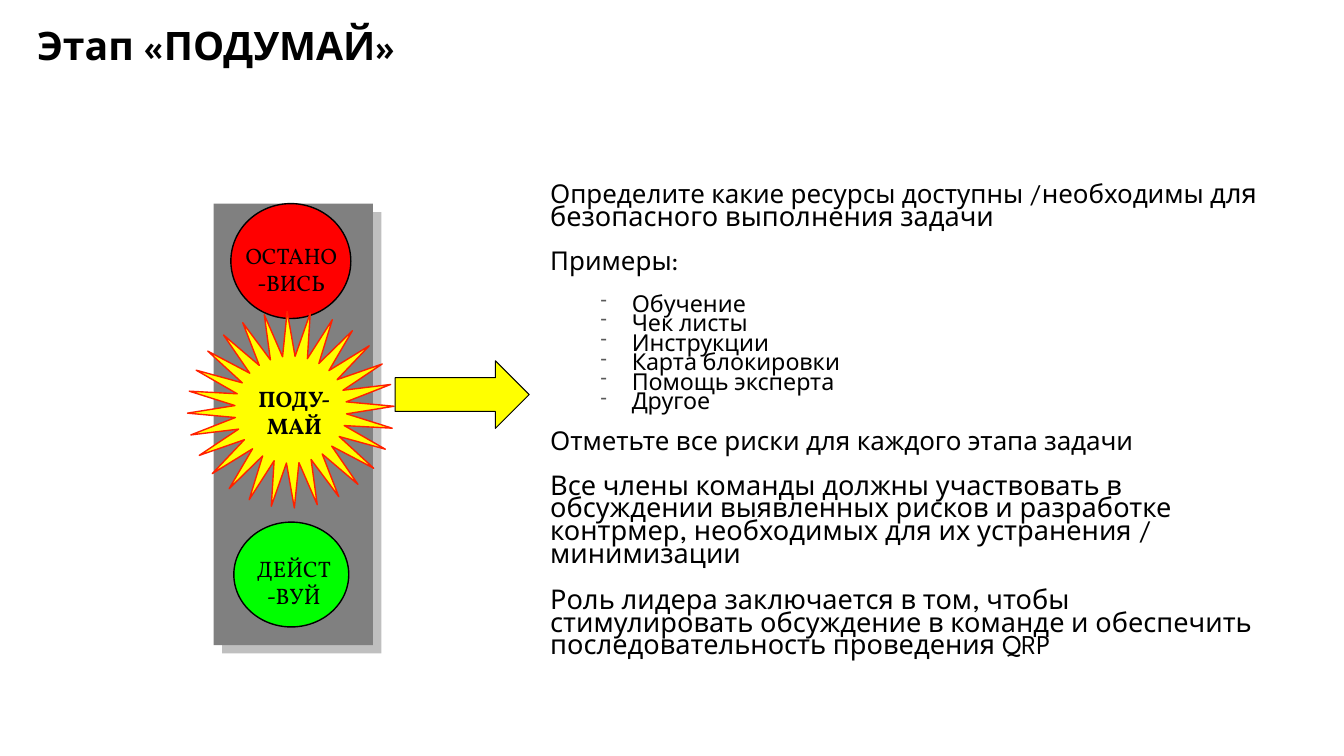
import math

import pptx
import pptx.dml.color
import pptx.enum.shapes
import pptx.enum.text
import pptx.oxml
import pptx.oxml.ns
import pptx.util

Pt = pptx.util.Pt
SHAPE = pptx.enum.shapes.MSO_SHAPE
ALIGN = pptx.enum.text.PP_ALIGN
ANCHOR = pptx.enum.text.MSO_ANCHOR

# Content
TITLE = "Этап «ПОДУМАЙ»"
# Each paragraph: space before, kind, [(text, size name)]
BODY = [
    (0, "plain", [("Определите какие ресурсы доступны /необходимы ", "body"),
                  ("для безопасного выполнения задачи", "large")]),
    (15.6, "plain", [("Примеры:", "body")]),
    (15.6, "item", [("Обучение", "item")]),
    (0, "item", [("Чек листы", "item")]),
    (0, "item", [("Инструкции", "item")]),
    (0, "item", [("Карта блокировки", "item")]),
    (0, "item", [("Помощь эксперта", "item")]),
    (0, "item", [("Другое", "item")]),
    (14, "plain", [("Отметьте все риски для каждого этапа задачи", "body")]),
    (15.6, "plain", [("Все члены команды должны участвовать в обсуждении "
                      "выявленных рисков и разработке контрмер, необходимых "
                      "для их устранения / минимизации", "large")]),
    (16.4, "plain", [("Роль лидера заключается в том, чтобы стимулировать "
                      "обсуждение в команде и обеспечить последовательность "
                      "проведения QRP", "large")]),
]
# Each label: box, lines, bold
LABELS = [
    ((128.16, 169.2, 159.84, 46.08), ["ОСТАНО", "-ВИСЬ"], False),
    ((172.08, 271.44, 76.32, 46.08), ["ПОДУ-МАЙ"], True),
    ((144.72, 393.12, 130.32, 46.08), ["ДЕЙСТ", "-ВУЙ"], False),
]

# Theme and layout
THEME = {
    "font": "League Spartan", "label font": "Vollkorn",
    "sizes": {"title": 28, "body": 18.5, "large": 19.4, "item": 16.6, "label": 16},
    "text": "000000", "bullet": "595959", "housing": "808080",
    "stop": "FF0000", "think": "FFFF00", "act": "00FF00", "burst edge": "FF2000",
}
TITLE_BOX = (19.44, 6.48, 864, 56.88)
BODY_BOX = (385.92, 128.88, 520.56, 362.16)
HOUSING = (152.64, 145.44, 113.76, 315.36)
ACT_LIGHT = (167.04, 372.96, 82.08, 74.88)
STOP_LIGHT = (164.88, 145.44, 85.68, 82.08)
ARROW = (282.24, 257.76, 95.76, 48.24)
BURST_CENTRE = (207.72, 292.68)
BURST_RADII = [(73.8, 70.2), (40, 38.2)]  # tips, notches
BURST_TIPS = 28
BURST_TURN = -2  # degrees


def colour(name):
    return pptx.dml.color.RGBColor.from_string(THEME[name])


def paint(shape, fill, line=None, width=1):
    shape.shadow.inherit = False
    shape.fill.solid()
    shape.fill.fore_color.rgb = colour(fill)
    if line:
        shape.line.color.rgb = colour(line)
        shape.line.width = Pt(width)
    else:
        shape.line.fill.background()


def add_painted(page, kind, box, *style):
    shape = page.shapes.add_shape(kind, *map(Pt, box))
    paint(shape, *style)
    return shape


def add_frame(page, box, anchor=ANCHOR.TOP):
    frame = page.shapes.add_textbox(*map(Pt, box)).text_frame
    frame.word_wrap = True
    frame.vertical_anchor = anchor
    return frame


def next_para(frame, index):
    return frame.add_paragraph() if index else frame.paragraphs[0]


def set_font(font, size, face="font", bold=False):
    font.name = THEME[face]
    font.size = Pt(THEME["sizes"][size])
    font.bold = bold
    font.color.rgb = colour("text")


def add_xml(parent, xml):
    namespace = pptx.oxml.ns.nsdecls("a")
    parent.append(pptx.oxml.parse_xml(xml.replace(" ", f" {namespace} ", 1)))


def add_bullet(para):
    props = para._p.get_or_add_pPr()
    props.set("marL", str(Pt(58.32)))
    props.set("indent", str(-Pt(22.32)))
    add_xml(props, f'<a:buClr ><a:srgbClr val="{THEME["bullet"]}"/></a:buClr>')
    add_xml(props, '<a:buSzPct val="80000"/>')
    add_xml(props, '<a:buChar char="-"/>')


def burst_points():
    for index in range(2 * BURST_TIPS):
        angle = math.radians(BURST_TURN) + index * math.pi / BURST_TIPS
        across, down = BURST_RADII[index % 2]
        yield (Pt(BURST_CENTRE[0] + across * math.cos(angle)),
               Pt(BURST_CENTRE[1] + down * math.sin(angle)))


def main():
    deck = pptx.Presentation()
    deck.slide_width, deck.slide_height = Pt(960), Pt(540)
    page = deck.slides.add_slide(deck.slide_layouts[6])

    # Title
    para = add_frame(page, TITLE_BOX, ANCHOR.MIDDLE).paragraphs[0]
    para.text = TITLE
    para.line_spacing = 0.8
    set_font(para.font, "title", bold=True)

    # Body text
    frame = add_frame(page, BODY_BOX)
    for index, (space, kind, spans) in enumerate(BODY):
        para = next_para(frame, index)
        if kind == "item":
            add_bullet(para)
        para.line_spacing = 0.7
        para.space_before = Pt(space)
        set_font(para.font, spans[0][1])
        for text, size in spans:
            span = para.add_run()
            span.text = text
            if size != spans[0][1]:
                span.font.size = Pt(THEME["sizes"][size])

    # Traffic light
    housing = add_painted(page, SHAPE.RECTANGLE, HOUSING, "housing")
    effects = housing._element.spPr.find(pptx.oxml.ns.qn("a:effectLst"))
    add_xml(effects, f'<a:outerShdw blurRad="0" dist="{Pt(8.5)}" dir="2700000" '
                     f'algn="ctr" rotWithShape="0"><a:srgbClr val="{THEME["housing"]}">'
                     '<a:alpha val="50000"/></a:srgbClr></a:outerShdw>')
    add_painted(page, SHAPE.OVAL, ACT_LIGHT, "act", "text")
    add_painted(page, SHAPE.OVAL, STOP_LIGHT, "stop", "text")

    # Starburst and arrow
    start, *others = burst_points()
    builder = page.shapes.build_freeform(*start)
    builder.add_line_segments(others, close=True)
    paint(builder.convert_to_shape(), "think", "burst edge")
    add_painted(page, SHAPE.RIGHT_ARROW, ARROW, "think", "text", 0.75)

    # Light labels
    for box, lines, bold in LABELS:
        frame = add_frame(page, box)
        for index, line in enumerate(lines):
            para = next_para(frame, index)
            para.text = line
            para.alignment = ALIGN.CENTER
            set_font(para.font, "label", "label font", bold)

    deck.save("out.pptx")


if __name__ == "__main__":
    main()
